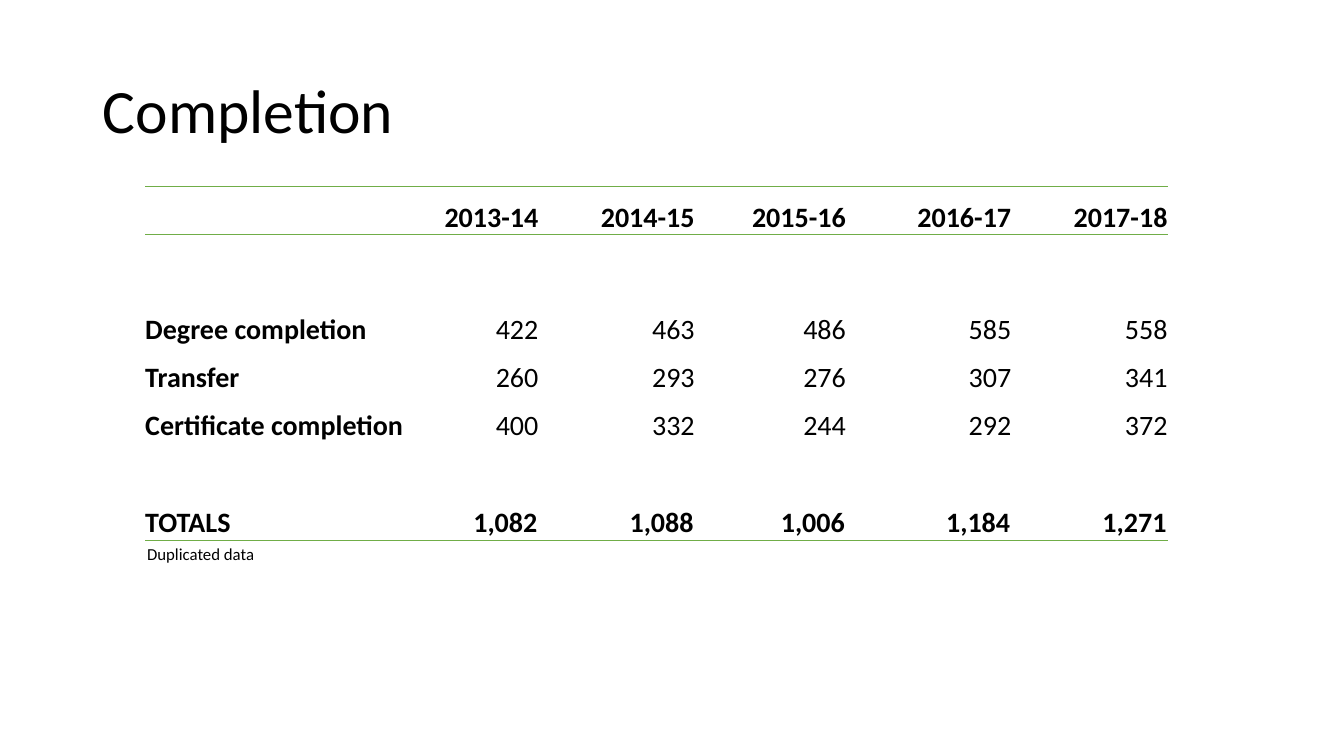
from lxml.etree import SubElement
from pptx import Presentation
from pptx.dml.color import RGBColor
from pptx.enum.text import MSO_ANCHOR, MSO_AUTO_SIZE, PP_ALIGN
from pptx.oxml.ns import qn
from pptx.util import Emu, Pt

COLOURS = {"text": "000000", "rule": "70AD47"}
PX = 9144
COLUMN_WIDTHS = [270, 120, 155, 150, 164, 155]
ROW_HEIGHTS = [48, 111, 48, 48, 96]
ROWS = [
    ["", "2013-14", "2014-15", "2015-16", "2016-17", "2017-18"],
    ["Degree completion", "422", "463", "486", "585", "558"],
    ["Transfer", "260", "293", "276", "307", "341"],
    ["Certificate completion", "400", "332", "244", "292", "372"],
    ["TOTALS", "1,082", "1,088", "1,006", "1,184", "1,271"],
]
RULED_EDGES = {0: ["lnT", "lnB"], len(ROWS) - 1: ["lnB"]}
PLAIN_TABLE_STYLE = "{2D5ABB26-0587-4C30-8999-92F81FD0307C}"


def px(*lengths):
    return [Emu(length * PX) for length in lengths]


def write(frame, text, size, bold=False, align=PP_ALIGN.LEFT, line_spacing=None):
    para = frame.paragraphs[0]
    para.alignment = align
    para.line_spacing = line_spacing
    span = para.add_run()
    span.text = text
    span.font.name = "Calibri"
    span.font.size = Pt(size)
    span.font.bold = bold
    span.font.color.rgb = RGBColor.from_string(COLOURS["text"])


class SlideBuilder:
    """Holds the style and the current page, and adds elements to it."""

    def __init__(self, deck):
        self.page = deck.slides.add_slide(deck.slide_layouts[5])

    def title(self, text, left, top, width, height):
        box = self.page.shapes.title
        box.left, box.top, box.width, box.height = px(left, top, width, height)
        box.text_frame.auto_size = MSO_AUTO_SIZE.NONE
        box.text_frame.vertical_anchor = MSO_ANCHOR.MIDDLE
        write(box.text_frame, text, 44, line_spacing=0.9)

    def note(self, text, left, top, width, height):
        box = self.page.shapes.add_textbox(*px(left, top, width, height))
        box.text_frame.word_wrap = False
        box.text_frame.auto_size = MSO_AUTO_SIZE.SHAPE_TO_FIT_TEXT
        write(box.text_frame, text, 12)

    def rule(self, cell, edge):
        properties = cell._tc.get_or_add_tcPr()
        line = SubElement(properties, qn(f"a:{edge}"), w=str(Pt(1)))
        fill = SubElement(line, qn("a:solidFill"))
        SubElement(fill, qn("a:srgbClr"), val=COLOURS["rule"])

    def table(self, rows, left, top, widths, heights):
        frame = self.page.shapes.add_table(
            len(rows), len(widths), *px(left, top, sum(widths), sum(heights))
        )
        table = frame.table
        table.horz_banding = False
        table._tbl.tblPr.find(qn("a:tableStyleId")).text = PLAIN_TABLE_STYLE
        for column, width in zip(table.columns, px(*widths)):
            column.width = width
        for row, height in zip(table.rows, px(*heights)):
            row.height = height
        for row_index, row in enumerate(rows):
            for column_index, text in enumerate(row):
                cell = table.cell(row_index, column_index)
                for edge in RULED_EDGES.get(row_index, []):
                    self.rule(cell, edge)
                cell.fill.background()
                if text:
                    is_label = column_index == 0
                    inset = Emu(0 if is_label or row_index not in RULED_EDGES or row_index == 0 else PX)
                    cell.margin_left = cell.margin_right = cell.margin_top = inset
                    cell.margin_bottom = 0
                    cell.vertical_anchor = MSO_ANCHOR.BOTTOM
                    write(
                        cell.text_frame,
                        text,
                        20,
                        bold=is_label or row_index in RULED_EDGES,
                        align=PP_ALIGN.LEFT if is_label else PP_ALIGN.RIGHT,
                    )


def main():
    deck = Presentation()
    deck.slide_width, deck.slide_height = px(1333, 750)
    builder = SlideBuilder(deck)
    builder.note("Duplicated data", 136, 535, 132, 30)
    builder.title("Completion", 92, 40, 1150, 145)
    builder.table(ROWS, 144, 185, COLUMN_WIDTHS, ROW_HEIGHTS)
    deck.save("out.pptx")


if __name__ == "__main__":
    main()
